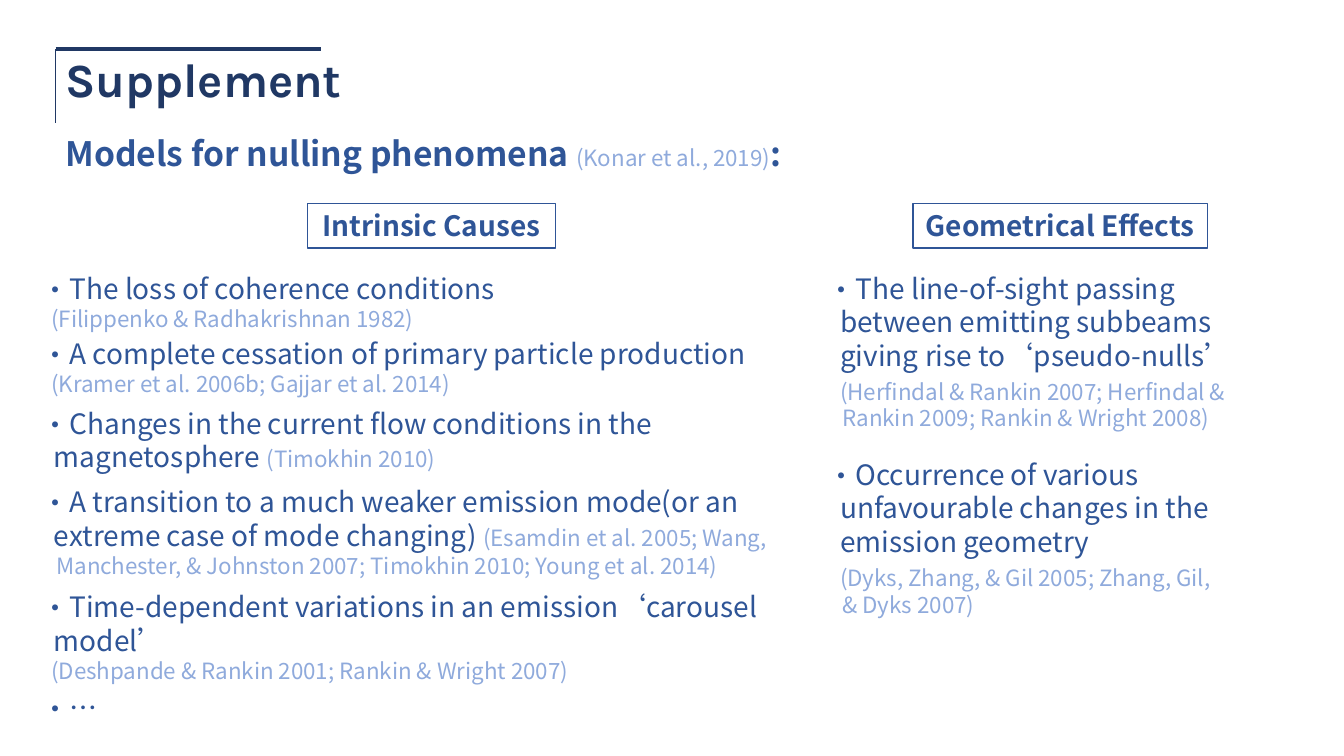
from lxml.etree import SubElement
from pptx import Presentation
from pptx.dml.color import RGBColor
from pptx.enum.shapes import MSO_CONNECTOR as Line, MSO_SHAPE as Shape
from pptx.enum.text import MSO_ANCHOR as Anchor, PP_ALIGN as Align
from pptx.oxml.ns import qn
from pptx.util import Cm, Pt

COLORS = {"title": "203864", "body": "2F5597", "cite": "8FAADC"}
SANS = "Noto Sans CJK SC"
SIZES = {"body": 20, "cite": 16}

TITLE = "Supplement"
SUBTITLE = [("Models for nulling phenomena ", "body"),
            ("(Konar et al., 2019)", "cite"), (":", "body")]
RULES = [(1.4, 1.24, 8.1, 1.24, 3), (1.4, 1.24, 1.4, 3.1, 1)]
HEADINGS = [("Intrinsic Causes", 7.75, 6.25), ("Geometrical Effects", 23.01, 7.42)]

# Each line is (kind, text, trailing citation)
COLUMNS = [
    (0.79, 20.14, [
        (6.71, [("bullet", "The loss of coherence conditions", ""),
                ("cite", "", "(Filippenko & Radhakrishnan 1982)")]),
        (8.36, [("bullet", "A complete cessation of primary particle production", ""),
                ("cite", "", "(Kramer et al. 2006b; Gajjar et al. 2014)")]),
        (10.11, [("bullet", "Changes in the current flow conditions in the", ""),
                 ("body", "magnetosphere ", "(Timokhin 2010)")]),
        (12.09, [("bullet", "A transition to a much weaker emission mode(or an", ""),
                 ("body", "extreme case of mode changing) ",
                  "(Esamdin et al. 2005; Wang,"),
                 ("more", "", "Manchester, & Johnston 2007; Timokhin 2010; "
                              "Young et al. 2014)")]),
        (14.73, [("bullet", "Time-dependent variations in an emission‘carousel", ""),
                 ("body", "model’", ""),
                 ("cite", "", "(Deshpande & Rankin 2001; Rankin & Wright 2007)")]),
        (17.27, [("bullet", "…", "")]),
    ]),
    (20.6, 12.22, [
        (6.71, [("bullet", "The line-of-sight passing", ""),
                ("body", "between emitting subbeams", ""),
                ("body", "giving rise to‘pseudo-nulls’", ""),
                ("spaced", "", "(Herfindal & Rankin 2007; Herfindal &"),
                ("more", "", "Rankin 2009; Rankin & Wright 2008)")]),
        (11.4, [("bullet", "Occurrence of various", ""),
                ("body", "unfavourable changes in the", ""),
                ("body", "emission geometry", ""),
                ("spaced", "", "(Dyks, Zhang, & Gil 2005; Zhang, Gil,"),
                ("more", "", "& Dyks 2007)")]),
    ]),
]
INDENTS = {"bullet": 0.71, "body": 0.32, "cite": 0.25, "spaced": 0.32, "more": 0.38}
HEIGHTS = {"bullet": 0.85, "body": 0.85, "cite": 0.7, "spaced": 0.85, "more": 0.7}


def rgb(name):
    return RGBColor.from_string(COLORS[name])


def add_run(p, text, color, size, font=SANS, bold=False):
    r = p.add_run()
    r.text = text
    r.font.size, r.font.bold, r.font.name = Pt(size), bold, font
    r.font.color.rgb = rgb(color)
    SubElement(r._r.get_or_add_rPr(), qn("a:ea"), typeface=font)


def add_box(s, x, y, w, h):
    tf = s.shapes.add_textbox(Cm(x), Cm(y), Cm(w), Cm(h)).text_frame
    tf.word_wrap = True
    return tf


def add_rule(s, x1, y1, x2, y2, width):
    c = s.shapes.add_connector(Line.STRAIGHT, Cm(x1), Cm(y1), Cm(x2), Cm(y2))
    c.line.color.rgb, c.line.width = rgb("title"), Pt(width)
    SubElement(c._element.spPr, qn("a:effectLst"))


def add_heading(s, text, x, w):
    sp = s.shapes.add_shape(Shape.RECTANGLE, Cm(x), Cm(5.13), Cm(w), Cm(1.12))
    sp.shadow.inherit = False
    sp.fill.background()
    sp.line.color.rgb, sp.line.width = rgb("body"), Pt(1)
    tf = sp.text_frame
    tf.word_wrap, tf.vertical_anchor = False, Anchor.MIDDLE
    p = tf.paragraphs[0]
    p.alignment = Align.CENTER
    add_run(p, text, "body", SIZES["body"], bold=True)


def add_item(s, x, y, w, lines):
    tf = add_box(s, x, y, w, 0.25 + sum(HEIGHTS[kind] for kind, _, _ in lines))
    for i, (kind, text, cite) in enumerate(lines):
        p = tf.add_paragraph() if i else tf.paragraphs[0]
        pPr = p._p.get_or_add_pPr()
        pPr.set("marL", str(Cm(INDENTS[kind])))
        if kind == "bullet":
            pPr.set("indent", str(-Cm(INDENTS[kind])))
            SubElement(pPr, qn("a:buFont"), typeface=SANS)
            SubElement(pPr, qn("a:buChar"), char="·")
        if kind == "spaced":
            p.space_before = Pt(4)
        for part, color in ((text, "body"), (cite, "cite")):
            if part:
                add_run(p, part, color, SIZES[color])


def main():
    """Build the supplement slide on models for nulling phenomena."""
    prs = Presentation()
    prs.slide_width, prs.slide_height = Cm(33.87), Cm(19.05)
    s = prs.slides.add_slide(prs.slide_layouts[6])
    for rule in RULES:
        add_rule(s, *rule)
    tf = add_box(s, 1.4, 1.14, 23.29, 1.7)
    add_run(tf.paragraphs[0], TITLE, "title", 34, "Karla", True)
    tf = add_box(s, 1.4, 3.23, 20.14, 1.27)
    for text, color in SUBTITLE:
        bold = color == "body"
        add_run(tf.paragraphs[0], text, color, 24 if bold else 16, bold=bold)
    for heading in HEADINGS:
        add_heading(s, *heading)
    for x, w, items in COLUMNS:
        for y, lines in items:
            add_item(s, x, y, w, lines)
    prs.save("out.pptx")


if __name__ == "__main__":
    main()
